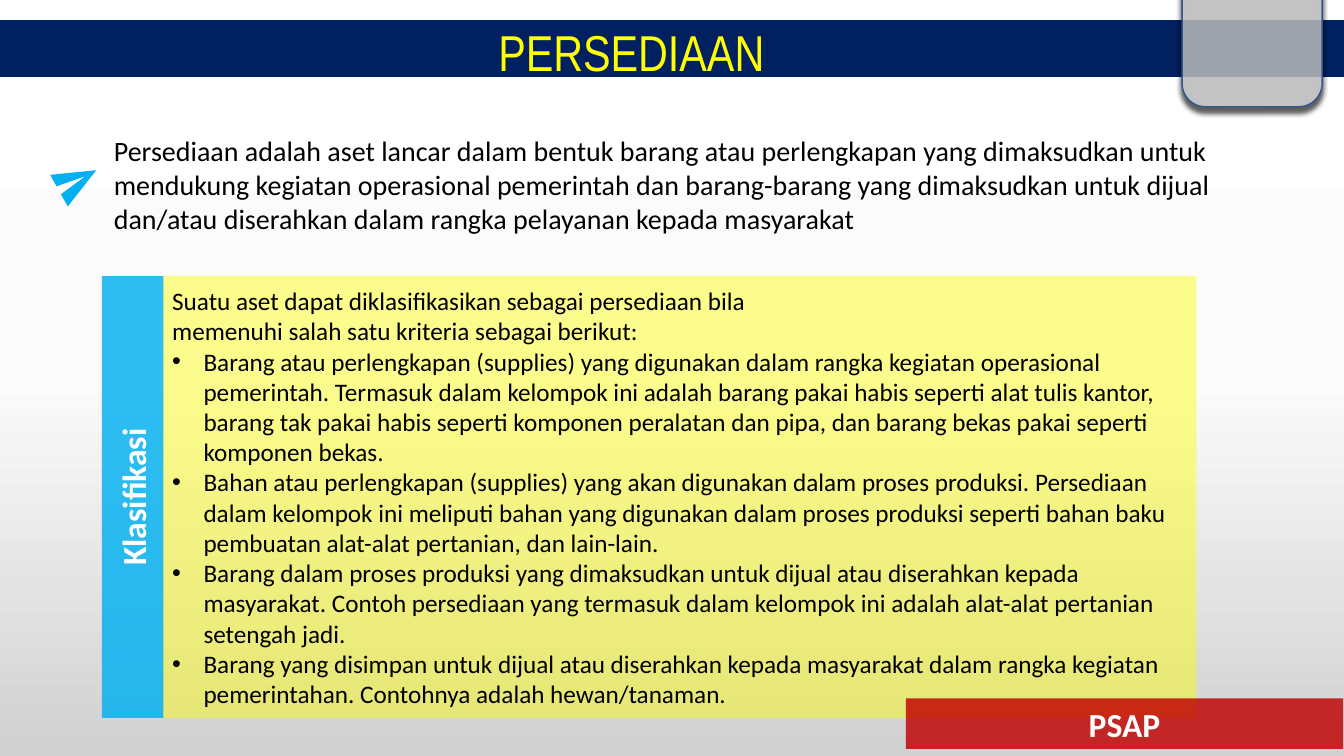
from copy import deepcopy

from pptx import Presentation
from pptx.dml.color import RGBColor
from pptx.enum import shapes, text
from pptx.oxml import ns, parse_xml
from pptx.util import Cm, Pt

HUES = {
    "navy": "002060", "blue": "00B0F0", "edge": "325491", "red": "C00000",
    "yellow": "FFFF00", "white": "FFFFFF", "pale": "FBFBFB",
    "grey": "D1D1D1", "black": "000000",
}
RECT = shapes.MSO_SHAPE.RECTANGLE
ROUND = shapes.MSO_SHAPE.ROUNDED_RECTANGLE
MID = text.MSO_ANCHOR.MIDDLE
CENTER = text.PP_ALIGN.CENTER
LEFT = text.PP_ALIGN.LEFT

INTRO = (
    "Persediaan adalah aset lancar dalam bentuk barang atau perlengkapan yang "
    "dimaksudkan untuk mendukung kegiatan operasional pemerintah dan "
    "barang-barang yang dimaksudkan untuk dijual dan/atau diserahkan dalam "
    "rangka pelayanan kepada masyarakat"
)
LEAD = [
    "Suatu aset dapat diklasifikasikan sebagai persediaan bila",
    "memenuhi salah satu kriteria sebagai berikut:",
]
ITEMS = [
    "Barang atau perlengkapan (supplies) yang digunakan dalam rangka kegiatan "
    "operasional pemerintah. Termasuk dalam kelompok ini adalah barang pakai "
    "habis seperti alat tulis kantor, barang tak pakai habis seperti komponen "
    "peralatan dan pipa, dan barang bekas pakai seperti komponen bekas.",
    "Bahan atau perlengkapan (supplies) yang akan digunakan dalam proses "
    "produksi. Persediaan dalam kelompok ini meliputi bahan yang digunakan "
    "dalam proses produksi seperti bahan baku pembuatan alat-alat pertanian, "
    "dan lain-lain.",
    "Barang dalam proses produksi yang dimaksudkan untuk dijual atau "
    "diserahkan kepada masyarakat. Contoh persediaan yang termasuk dalam "
    "kelompok ini adalah alat-alat pertanian setengah jadi.",
    "Barang yang disimpan untuk dijual atau diserahkan kepada masyarakat dalam "
    "rangka kegiatan pemerintahan. Contohnya adalah hewan/tanaman.",
]


def rgb(hue):
    return RGBColor.from_string(HUES[hue])


def paint(shape, hue, alpha=100, line=None):
    """Fill a shape, with an optional outline and opacity in percent."""
    shape.shadow.inherit = False
    shape.fill.solid()
    shape.fill.fore_color.rgb = rgb(hue)
    if alpha < 100:
        color = shape.element.spPr.find(ns.qn("a:solidFill"))[0]
        color.append(parse_xml(
            f'<a:alpha {ns.nsdecls("a")} val="{alpha * 1000}"/>'))
    if line:
        shape.line.color.rgb = rgb(line)
        shape.line.width = Pt(1)
    else:
        shape.line.fill.background()


def block(slide, kind, box, hue, alpha=100, line=None):
    shape = slide.shapes.add_shape(kind, *map(Cm, box))
    paint(shape, hue, alpha, line)
    return shape


def write(frame, lines, size, hue, face="Calibri", bold=False, align=LEFT,
          anchor=MID):
    """Put one paragraph per line in a text frame."""
    frame.word_wrap = True
    frame.vertical_anchor = anchor
    frame.text = "\n".join(lines)
    for para in frame.paragraphs:
        para.alignment = align
        for run in para.runs:
            run.font.size = Pt(size)
            run.font.name = face
            run.font.bold = bold
            run.font.color.rgb = rgb(hue)


def bullet(para):
    props = para._p.get_or_add_pPr()
    props.set("marL", str(Cm(0.79)))
    props.set("indent", str(Cm(-0.79)))
    props.append(parse_xml(
        f'<a:buFont {ns.nsdecls("a")} typeface="Arial"/>'))
    props.append(parse_xml(f'<a:buChar {ns.nsdecls("a")} char="•"/>'))


def drop(shape):
    """Cast a soft shadow straight down."""
    effects = shape.element.spPr.find(ns.qn("a:effectLst"))
    effects.append(parse_xml(
        f'<a:outerShdw {ns.nsdecls("a")} blurRad="{Pt(4)}" dist="{Pt(4)}" '
        f'dir="5400000" rotWithShape="0">'
        f'<a:srgbClr val="{HUES["black"]}"/></a:outerShdw>'))


def shade(slide):
    """Give the slide a three-stop vertical gradient."""
    fill = slide.background.fill
    fill.gradient()
    fill.gradient_angle = 270
    stops = slide.element.find(".//" + ns.qn("a:gsLst"))
    stops.insert(1, deepcopy(stops[0]))
    for stop, hue, place in zip(fill.gradient_stops,
                                ("white", "pale", "grey"), (0, 0.5, 1)):
        stop.color.rgb = rgb(hue)
        stop.position = place


def dart(slide):
    """Draw the paper dart that marks the definition."""
    points = [(1.42, 5), (2.49, 4.55), (1.42, 4.09),
              (1.42, 4.42), (2.18, 4.55), (1.42, 4.65)]
    start, *rest = [(Cm(x), Cm(y)) for x, y in points]
    pen = slide.shapes.build_freeform(*start)
    pen.add_line_segments(rest, close=True)
    shape = pen.convert_to_shape()
    paint(shape, "blue")
    shape.rotation = 331


def main():
    deck = Presentation()
    deck.slide_width, deck.slide_height = Cm(33.87), Cm(19.05)
    slide = deck.slides.add_slide(deck.slide_layouts[5])
    shade(slide)

    # Header band, corner card and title
    block(slide, RECT, (-0.23, 0.51, 34.67, 1.42), "navy", line="navy")
    drop(block(slide, ROUND, (29.79, -3.61, 3.53, 6.3), "white", 62, "edge"))
    title = slide.shapes.title
    title.left, title.top, title.width, title.height = map(
        Cm, (4.37, 0.41, 23.09, 1.8))
    write(title.text_frame, ["PERSEDIAAN"], 36, "yellow", "Arial Narrow",
          align=CENTER, anchor=text.MSO_ANCHOR.TOP)
    title.element.getparent().append(title.element)

    # Definition
    dart(slide)
    intro = slide.shapes.add_textbox(*map(Cm, (2.62, 3.25, 29.92, 2.82)))
    write(intro.text_frame, [INTRO], 20, "black",
          anchor=text.MSO_ANCHOR.TOP)

    # Criteria panel with its side label
    panel = block(slide, RECT, (4.09, 6.96, 26.06, 11.13), "yellow", 44)
    write(panel.text_frame, LEAD + ITEMS, 18, "black")
    for para in panel.text_frame.paragraphs[len(LEAD):]:
        bullet(para)
    side = block(slide, RECT, (2.57, 6.96, 1.55, 11.13), "blue", 82)
    write(side.text_frame, ["Klasifikasi"], 24, "white", bold=True,
          align=CENTER)
    side.text_frame._txBody.bodyPr.set("vert", "vert270")

    # Footer tag
    tag = block(slide, RECT, (22.83, 17.6, 11.02, 1.27), "red", 82)
    write(tag.text_frame, ["PSAP"], 24, "white", bold=True, align=CENTER)

    deck.save("out.pptx")


if __name__ == "__main__":
    main()
